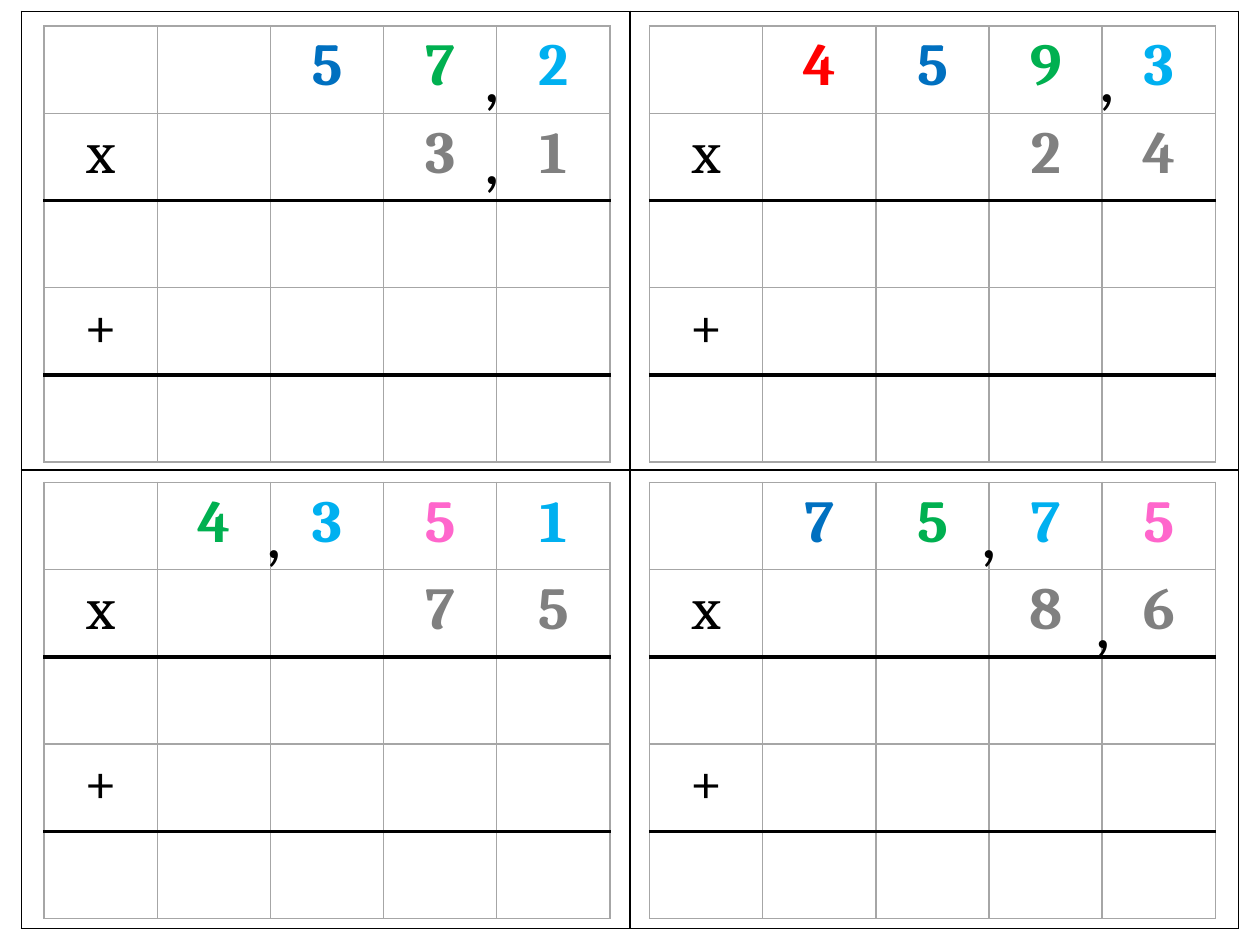
from lxml.etree import SubElement
from pptx import Presentation
from pptx.dml.color import RGBColor
from pptx.enum.text import PP_ALIGN
from pptx.oxml.ns import qn
from pptx.util import Pt

HUES = {
    "white": "FFFFFF", "black": "000000", "line": "A6A6A6", "gray": "808080",
    "red": "FF0000", "blue": "0070C0", "green": "00B050", "sky": "00B0F0",
    "pink": "FF66CC",
}
DIGIT = {"name": "Cambria", "size": Pt(34), "bold": True}
SIGN = DIGIT | {"bold": False}
COMMA = {"name": "Calibri", "size": Pt(40), "bold": False}

COL, ROW = 64.68, 49.85
# Each sum: left, top, top digits with hues (right-aligned), multiplier
SUMS = [
    (25.2, 14.9, [("5", "blue"), ("7", "green"), ("2", "sky")], "31"),
    (371.2, 14.9, [("4", "red"), ("5", "blue"), ("9", "green"), ("3", "sky")], "24"),
    (25.2, 275.7, [("4", "green"), ("3", "sky"), ("5", "pink"), ("1", "sky")], "75"),
    (371.2, 275.7, [("7", "blue"), ("5", "green"), ("7", "sky"), ("5", "pink")], "86"),
]
COMMAS = [(552.96, 275.76), (620.64, 15.12), (269.28, 61.92),
          (269.28, 15.12), (618.48, 326.88), (144.72, 275.76)]


class Sheet:
    def __init__(self, slide):
        self.slide = slide

    def label(self, frame, text, style, hue):
        par = frame.paragraphs[0]
        run = par.add_run()
        run.text = text
        for key, value in style.items():
            setattr(run.font, key, value)
        run.font.color.rgb = RGBColor.from_string(HUES[hue])
        return par

    def edge(self, cell, side, hue, width):
        props = cell._tc.get_or_add_tcPr()
        line = SubElement(props, qn(f"a:ln{side}"), w=str(Pt(width)))
        fill = SubElement(line, qn("a:solidFill"))
        SubElement(fill, qn("a:srgbClr"), val=HUES[hue])

    def grid(self, left, top, cols, rows, wide, high, hue, rules=()):
        """Add a lined table; rules are the row borders drawn bold and black."""
        shape = self.slide.shapes.add_table(
            rows, cols, Pt(left), Pt(top), Pt(cols * wide), Pt(rows * high))
        table = shape.table
        table.first_row = table.horz_banding = False
        for col in table.columns:
            col.width = Pt(wide)
        for r, row in enumerate(table.rows):
            row.height = Pt(high)
            for cell in row.cells:
                for side, rule in (("L", None), ("R", None), ("T", r), ("B", r + 1)):
                    look = ("black", 2.25) if rule in rules else (hue, 1)
                    self.edge(cell, side, *look)
                cell.fill.solid()
                cell.fill.fore_color.rgb = RGBColor.from_string(HUES["white"])
        return table

    def entry(self, table, row, col, text, style, hue):
        frame = table.cell(row, col).text_frame
        self.label(frame, text, style, hue).alignment = PP_ALIGN.CENTER

    def sum(self, left, top, digits, factor):
        table = self.grid(left, top, 5, 5, COL, ROW, "line", rules=(2, 4))
        for col, (text, hue) in enumerate(digits, 5 - len(digits)):
            self.entry(table, 0, col, text, DIGIT, hue)
        for col, text in enumerate(factor, 5 - len(factor)):
            self.entry(table, 1, col, text, DIGIT, "gray")
        for row, text in ((1, "x"), (3, "+")):
            self.entry(table, row, 0, text, SIGN, "black")

    def comma(self, left, top):
        box = self.slide.shapes.add_textbox(Pt(left), Pt(top), Pt(22.32), Pt(55.44))
        box.text_frame.word_wrap = True
        self.label(box.text_frame, ",", COMMA, "black")


def main():
    deck = Presentation()
    deck.slide_width, deck.slide_height = Pt(720), Pt(540)
    sheet = Sheet(deck.slides.add_slide(deck.slide_layouts[6]))
    sheet.grid(12.24, 6.48, 2, 2, 347.76, 262.08, "black")
    for item in SUMS:
        sheet.sum(*item)
    for spot in COMMAS:
        sheet.comma(*spot)
    deck.save("out.pptx")


if __name__ == "__main__":
    main()
